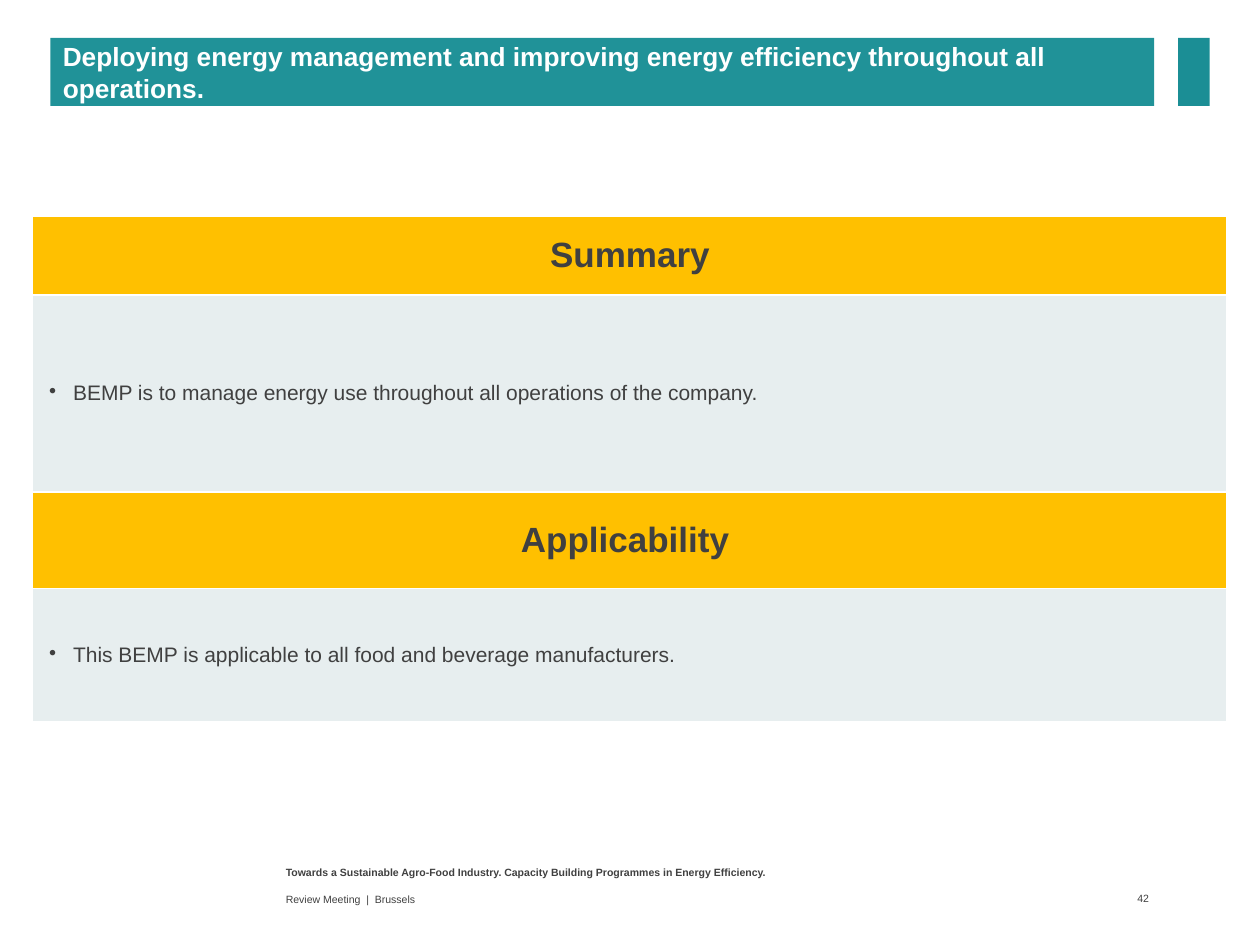
"""Build the energy management slide with its summary and applicability tables."""
from lxml import etree
from pptx import Presentation
from pptx import util as u
from pptx.dml.color import RGBColor
from pptx.enum import shapes, text
from pptx.oxml import ns

TEAL = RGBColor(0x20, 0x92, 0x98)
DEEP = RGBColor(0x1B, 0x8E, 0x95)
GOLD = RGBColor(0xFF, 0xC0, 0x00)
PALE = RGBColor(0xE7, 0xEE, 0xEF)
GREY = RGBColor(0x40, 0x40, 0x40)
WHITE = RGBColor(0xFF, 0xFF, 0xFF)

TITLE = "Deploying energy management and improving energy efficiency throughout all operations."
TABLES = [
    (1.72, (0.62, 1.56), "Summary",
     "BEMP is to manage energy use throughout all operations of the company."),
    (3.91, (0.76, 1.06), "Applicability ",
     "This BEMP is applicable to all food and beverage manufacturers. "),
]
LEFT, WIDTH = 0.26, 9.48
PAD = (0.1, 0.05, 0.1, 0.05)
TOP, MID = text.MSO_ANCHOR.TOP, text.MSO_ANCHOR.MIDDLE
ALIGN = text.PP_ALIGN
FOOT = [
    ("Towards a Sustainable Agro-Food Industry. Capacity Building Programmes in Energy Efficiency.",
     (2.17, 6.82, 5.5, 0.21), TOP, PAD, {"bold": True}),
    ("Review Meeting  |  Brussels", (2.17, 7.04, 5.5, 0.19), MID, PAD, {}),
    ("42", (8.6, 7.03, 0.56, 0.2), MID, (0.1, 0.05, 0.04, 0.05), {"align": ALIGN.RIGHT}),
]


def write(frame, words, size=6, color=GREY, bold=False, align=ALIGN.LEFT, bullet=False):
    para = frame.paragraphs[0]
    para.alignment = align
    if bullet:
        props = para._p.get_or_add_pPr()
        props.set("marL", str(u.Inches(0.19)))
        props.set("indent", str(u.Inches(-0.19)))
        etree.SubElement(props, ns.qn("a:buChar")).set("char", "•")
        para.space_after = u.Pt(6)
    run = para.add_run()
    run.text = words
    font = run.font
    font.name, font.size, font.bold = "Arial", u.Pt(size), bold
    font.color.rgb = color


def inset(item, pad):
    (item.margin_left, item.margin_top,
     item.margin_right, item.margin_bottom) = map(u.Inches, pad)


def edge(cell):
    props = cell._tc.get_or_add_tcPr()
    for spot, side in enumerate("LRTB"):
        line = etree.Element(ns.qn(f"a:ln{side}"), w=str(u.Pt(1)))
        fill = etree.SubElement(line, ns.qn("a:solidFill"))
        etree.SubElement(fill, ns.qn("a:srgbClr")).set("val", str(WHITE))
        props.insert(spot, line)


def table(slide, top, rows, head, body):
    box = map(u.Inches, (LEFT, top, WIDTH, sum(rows)))
    grid = slide.shapes.add_table(2, 1, *box).table
    styles = [
        (head, GOLD, PAD, {"size": 20, "bold": True, "align": ALIGN.CENTER}),
        (body, PALE, (0.13, 0.06, 0.13, 0.06),
         {"size": 12, "align": ALIGN.JUSTIFY, "bullet": True}),
    ]
    for row, (high, (words, color, pad, style)) in enumerate(zip(rows, styles)):
        grid.rows[row].height = u.Inches(high)
        cell = grid.cell(row, 0)
        cell.fill.solid()
        cell.fill.fore_color.rgb = color
        cell.vertical_anchor = MID
        inset(cell, pad)
        edge(cell)
        write(cell.text_frame, words, **style)


def block(slide, left, width, color):
    box = map(u.Inches, (left, 0.3, width, 0.54))
    shape = slide.shapes.add_shape(shapes.MSO_SHAPE.RECTANGLE, *box)
    shape.shadow.inherit = False
    shape.fill.solid()
    shape.fill.fore_color.rgb = color
    shape.line.fill.background()
    return shape.text_frame


def main():
    deck = Presentation()
    deck.slide_width, deck.slide_height = u.Inches(10), u.Inches(7.5)
    slide = deck.slides.add_slide(deck.slide_layouts[6])
    for words, box, anchor, pad, style in FOOT:
        frame = slide.shapes.add_textbox(*map(u.Inches, box)).text_frame
        frame.word_wrap = True
        frame.vertical_anchor = anchor
        inset(frame, pad)
        write(frame, words, **style)
    for item in TABLES:
        table(slide, *item)
    frame = block(slide, 0.4, 8.76, TEAL)
    frame.word_wrap = True
    frame.vertical_anchor = MID
    write(frame, TITLE, size=15, color=WHITE, bold=True)
    block(slide, 9.35, 0.25, DEEP)
    deck.save("out.pptx")


if __name__ == "__main__":
    main()
